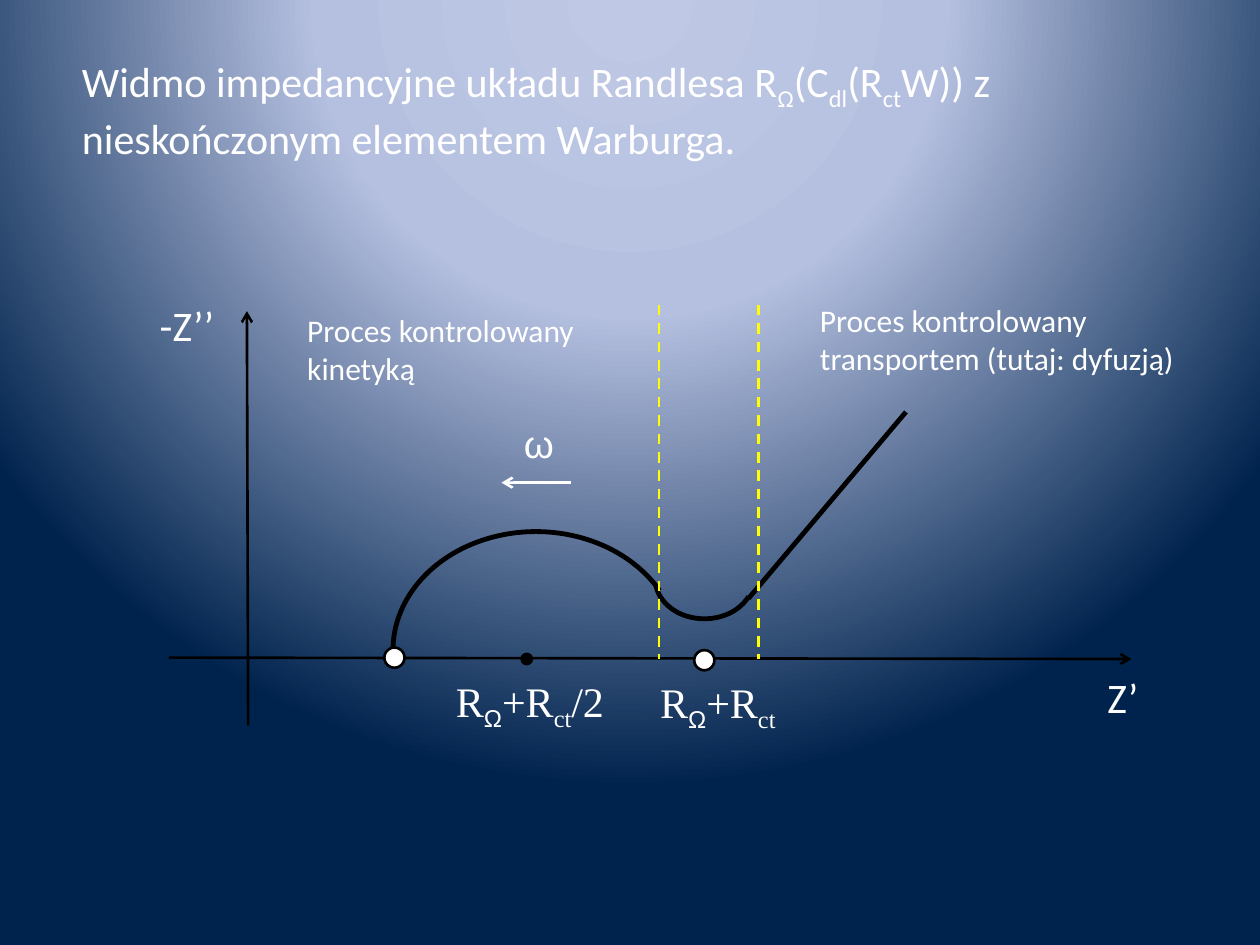
from dataclasses import dataclass

from pptx import Presentation
from pptx.dml.color import RGBColor
from pptx.enum.dml import MSO_LINE
from pptx.enum.shapes import MSO_CONNECTOR, MSO_SHAPE
from pptx.enum.text import MSO_ANCHOR, MSO_AUTO_SIZE, PP_ALIGN
from pptx.oxml import parse_xml
from pptx.oxml.ns import nsdecls, qn
from pptx.util import Pt

STRAIGHT = MSO_CONNECTOR.STRAIGHT
ARC, OVAL = MSO_SHAPE.ARC, MSO_SHAPE.OVAL
DASH = MSO_LINE.DASH
TOP, LEFT = MSO_ANCHOR.TOP, PP_ALIGN.LEFT
FIT_SHAPE, NO_FIT = MSO_AUTO_SIZE.SHAPE_TO_FIT_TEXT, MSO_AUTO_SIZE.NONE
TITLE_ONLY = 5


@dataclass(frozen=True)
class Theme:
    text: RGBColor = RGBColor(255, 255, 255)
    ink: RGBColor = RGBColor(0, 0, 0)
    divider: RGBColor = RGBColor(255, 255, 0)
    gradient: tuple = ((0, "BFC9E5"), (40, "B5C0E0"), (100, "00234D"))
    body_font: str = "Calibri"
    formula_font: str = "Times New Roman"
    symbol_font: str = "Arial"
    large: float = 24
    symbol: float = 22
    note: float = 18
    thin: float = 1.5
    thick: float = 2.75


THEME = Theme()


def points(*lengths):
    return [Pt(length) for length in lengths]


def paint_background(slide):
    """Radial gradient centred above the top edge."""
    slide.background.fill.gradient()
    linear = slide.element.find(".//" + qn("a:gradFill"))
    stops = "".join(
        f'<a:gs pos="{percent * 1000}"><a:srgbClr val="{color}"/></a:gs>'
        for percent, color in THEME.gradient)
    radial = parse_xml(
        f'<a:gradFill {nsdecls("a")} rotWithShape="1"><a:gsLst>{stops}</a:gsLst>'
        '<a:path path="circle"><a:fillToRect l="50000" t="-80000" r="50000" b="180000"/>'
        '</a:path></a:gradFill>')
    linear.getparent().replace(linear, radial)


def style_paragraph(paragraph, size, font=THEME.body_font):
    paragraph.alignment = LEFT
    paragraph.font.size = Pt(size)
    paragraph.font.name = font
    paragraph.font.color.rgb = THEME.text


def write_formula(paragraph, pieces, omega_font=None):
    """Write pieces in turn as normal text and subscript."""
    for index, piece in enumerate(pieces):
        run = paragraph.add_run()
        run.text = piece
        if index % 2:
            run.font._element.set("baseline", "-25000")
        if piece == "Ω" and omega_font:
            run.font.name = omega_font


def set_title(slide, box, pieces):
    title = slide.shapes.title
    title.left, title.top, title.width, title.height = points(*box)
    frame = title.text_frame
    frame.auto_size = NO_FIT
    frame.vertical_anchor = TOP
    style_paragraph(frame.paragraphs[0], THEME.large)
    write_formula(frame.paragraphs[0], pieces)


def add_text_frame(slide, box, wrap):
    frame = slide.shapes.add_textbox(*points(*box)).text_frame
    frame.word_wrap = wrap
    frame.auto_size = FIT_SHAPE
    return frame


def add_label(slide, box, lines, size=THEME.large, font=THEME.body_font):
    frame = add_text_frame(slide, box, wrap=False)
    frame.text = "\n".join(lines)
    for paragraph in frame.paragraphs:
        style_paragraph(paragraph, size, font)


def add_formula(slide, left, top, pieces):
    paragraph = add_text_frame(slide, (left, top, 135.4, 36), wrap=True).paragraphs[0]
    style_paragraph(paragraph, THEME.large, THEME.formula_font)
    write_formula(paragraph, pieces, THEME.symbol_font)


def add_line(slide, start, end, color=THEME.ink, width=THEME.thin, dash=None, arrow=False):
    connector = slide.shapes.add_connector(STRAIGHT, *points(*start, *end))
    line = connector.line
    line.color.rgb = color
    line.width = Pt(width)
    if dash:
        line.dash_style = dash
    if arrow:
        line._get_or_add_ln().append(
            parse_xml(f'<a:tailEnd {nsdecls("a")} type="arrow"/>'))
    connector._element.spPr.append(parse_xml(f'<a:effectLst {nsdecls("a")}/>'))


def add_arc(slide, box, start, end, rotation=0):
    """Draw an arc between two angles in degrees, clockwise from the right."""
    arc = slide.shapes.add_shape(ARC, *points(*box))
    for index, angle in enumerate((start, end)):
        arc.adjustments[index] = angle * 0.6
    arc.rotation = rotation
    arc.shadow.inherit = False
    arc.fill.background()
    arc.line.color.rgb = THEME.ink
    arc.line.width = Pt(THEME.thick)


def add_marker(slide, center_x, center_y, diameter, color):
    radius = diameter / 2
    marker = slide.shapes.add_shape(
        OVAL, *points(center_x - radius, center_y - radius, diameter, diameter))
    marker.shadow.inherit = False
    marker.fill.solid()
    marker.fill.fore_color.rgb = color
    marker.line.color.rgb = THEME.ink
    marker.line.width = Pt(THEME.thin)


def draw_axes(slide):
    add_line(slide, (96.5, 375.8), (646.6, 376.6), arrow=True)
    add_line(slide, (141.8, 414.7), (141.1, 177.8), arrow=True)
    add_label(slide, (84.2, 167.8, 46.1, 36), ["-Z’’"])
    add_label(slide, (625.7, 380.2, 32.4, 36), ["Z’"])


def draw_spectrum(slide):
    add_arc(slide, (224.6, 303.8, 163.4, 135.4), 177.39, 334.29)
    add_arc(slide, (374.4, 308.2, 56.2, 45.4), 201.55, 353.7, rotation=180)
    add_line(slide, (427.7, 342), (517.7, 235.4), width=THEME.thick)
    for center_x, center_y in ((225.4, 375.8), (402.5, 377.3)):
        add_marker(slide, center_x, center_y, 11.5, THEME.text)
    add_marker(slide, 301, 376.6, 5.8, THEME.ink)


def main():
    presentation = Presentation()
    presentation.slide_width, presentation.slide_height = points(720, 540)
    slide = presentation.slides.add_slide(presentation.slide_layouts[TITLE_ONLY])
    paint_background(slide)
    set_title(slide, (39.6, 28.1, 646.6, 65.5),
              ["Widmo impedancyjne układu Randlesa R", "Ω", "(C", "dl", "(R", "ct",
               "W)) z nieskończonym elementem Warburga."])

    draw_axes(slide)
    draw_spectrum(slide)
    add_formula(slide, 253.4, 382.3, ["R", "Ω", "+R", "ct", "/2"])
    add_formula(slide, 370.1, 383, ["R", "Ω", "+R", "ct"])

    add_line(slide, (326.2, 275.8), (286.6, 275.8), color=THEME.text, arrow=True)
    add_label(slide, (292.3, 236.2, 29.5, 33.8), ["ω"], THEME.symbol, THEME.symbol_font)

    for divider_x in (376.6, 433.4):
        add_line(slide, (divider_x, 174.2), (divider_x, 376.6), color=THEME.divider, dash=DASH)
    add_label(slide, (168.5, 174.2, 168.5, 51.1),
              ["Proces kontrolowany", "kinetyką"], THEME.note)
    add_label(slide, (461.5, 168.5, 220.3, 51.1),
              ["Proces kontrolowany", "transportem (tutaj: dyfuzją)"], THEME.note)
    presentation.save("out.pptx")


if __name__ == "__main__":
    main()
